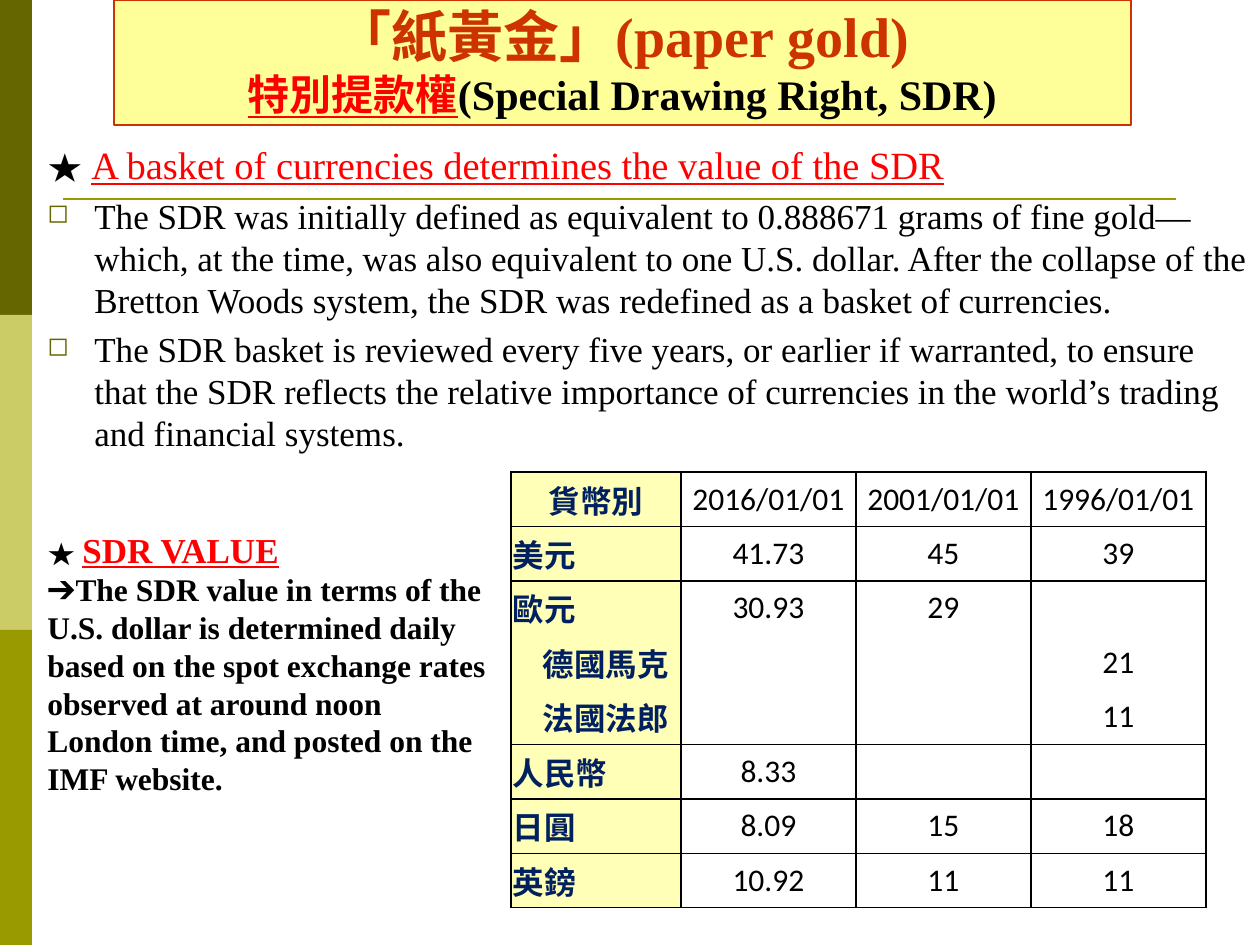
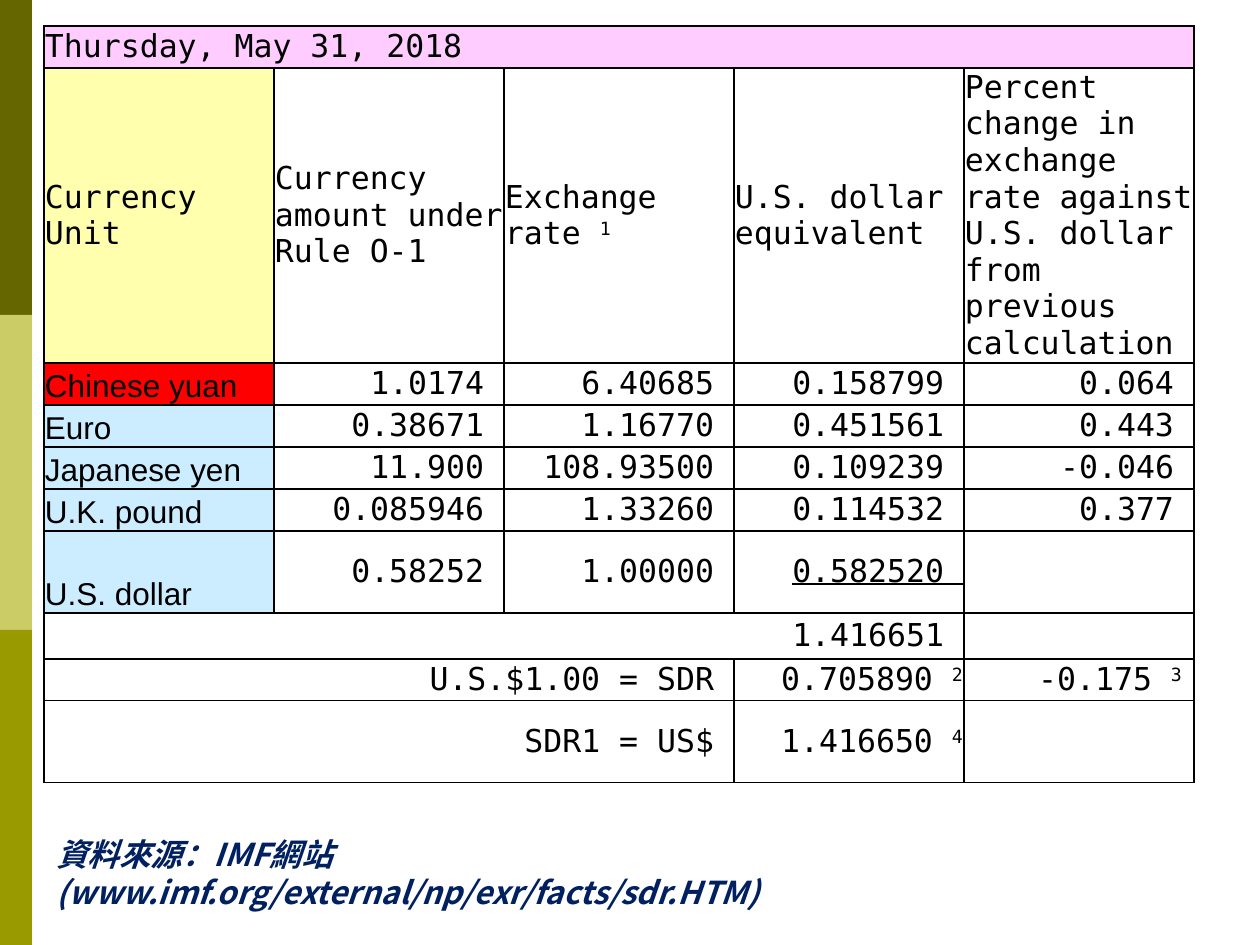
from lxml import etree
from pptx import Presentation, util as u
from pptx.dml.color import RGBColor
from pptx.enum import shapes, text
from pptx.oxml.ns import qn

EMU_PER_PX = 914400 / 126
SERIF, MONO, SANS, TABLE_FONT = "Times New Roman", "DejaVu Sans Mono", "Arial", "Calibri"
CJK = "Noto Sans CJK TC"
BLACK, RED, NAVY, WHITE = "000000", "FF0000", "002060", "FFFFFF"
BANDS = ("666600", "CCCC66", "999900")
LEFT, CENTER, RIGHT = text.PP_ALIGN.LEFT, text.PP_ALIGN.CENTER, text.PP_ALIGN.RIGHT
MIDDLE, BOTTOM = text.MSO_ANCHOR.MIDDLE, text.MSO_ANCHOR.BOTTOM


def px(length):
    """Turn pixels into EMU."""
    return u.Emu(round(length * EMU_PER_PX))


def rgb(value):
    """Turn a hex string into a colour."""
    return RGBColor.from_string(value)


def child(parent, tag, **attributes):
    """Append a drawing element with attributes."""
    return etree.SubElement(parent, qn(tag), attributes)


def write(paragraph, words, font=SERIF, size=18, color=BLACK, bold=False,
          italic=False, underline=False, raised=False, east=None):
    """Append formatted words to a paragraph."""
    run = paragraph.add_run()
    run.text = words
    style = run.font
    style.name, style.size = font, u.Pt(size)
    style.bold, style.italic, style.underline = bold, italic, underline
    style.color.rgb = rgb(color)
    if east:
        child(run._r.get_or_add_rPr(), "a:ea", typeface=east)
    if raised:
        run._r.get_or_add_rPr().set("baseline", "30000")


def text_frame(slide, box):
    """Add a wrapping text box and return its frame."""
    frame = slide.shapes.add_textbox(*map(px, box)).text_frame
    frame.word_wrap = True
    return frame


def frame_slide(slide):
    """Draw the side bands and the rule shared by the slides."""
    for order, color in enumerate(BANDS):
        band = slide.shapes.add_shape(shapes.MSO_SHAPE.RECTANGLE,
                                      *map(px, (0, order * 315, 32, 315)))
        band.shadow.inherit = False
        band.fill.solid()
        band.fill.fore_color.rgb = rgb(color)
        band.line.fill.background()
    rule = slide.shapes.add_connector(shapes.MSO_CONNECTOR.STRAIGHT,
                                      *map(px, (63, 199, 1176, 199)))
    rule.line.color.rgb = rgb(BANDS[-1])
    rule.line.width = u.Pt(1.5)
    child(rule._element.spPr, "a:effectLst")


def style_cell(cell, fill=None, inset=(2, 0), anchor=MIDDLE, sides="LRTB", top_width=1):
    """Set the borders, fill, margins and anchor of a cell."""
    properties = cell._tc.get_or_add_tcPr()
    for side in "LRTB":
        width = top_width if side == "T" else 1
        edge = child(properties, f"a:ln{side}", w=str(u.Pt(width)))
        if side in sides:
            child(child(edge, "a:solidFill"), "a:srgbClr", val=BLACK)
        else:
            child(edge, "a:noFill")
    if fill:
        cell.fill.solid()
        cell.fill.fore_color.rgb = rgb(fill)
    else:
        cell.fill.background()
    cell.margin_left = cell.margin_right = px(inset[0])
    cell.margin_top = cell.margin_bottom = px(inset[1])
    cell.vertical_anchor = anchor


def plain_table(slide, box, rows, widths):
    """Add a table without banding, with the given column widths."""
    table = slide.shapes.add_table(rows, len(widths), *map(px, box)).table
    table.first_row = table.horz_banding = False
    for column, width in zip(table.columns, widths):
        column.width = px(width)
    return table


def sdr_title(slide, box):
    """Format the two-line title panel."""
    title = slide.shapes.title
    title.left, title.top, title.width, title.height = map(px, box)
    title.fill.solid()
    title.fill.fore_color.rgb = rgb("FFFF99")
    title.line.color.rgb = rgb("CC3300")
    title.line.width = u.Pt(0.75)
    frame = title.text_frame
    frame.auto_size = text.MSO_AUTO_SIZE.NONE
    frame.vertical_anchor = BOTTOM
    paper_gold, full_name = frame.paragraphs[0], frame.add_paragraph()
    paper_gold.alignment = full_name.alignment = CENTER
    write(paper_gold, "「紙黃金」", font=CJK, size=32, color="CC3300", bold=True, east=CJK)
    write(paper_gold, "(paper gold)", size=32, color="CC3300", bold=True)
    write(full_name, "特別提款權", size=24, color=RED, bold=True, underline=True, east=CJK)
    write(full_name, "(Special Drawing Right, SDR)", size=24, bold=True)


def basket_notes(slide, box):
    """Write the heading and the bulleted notes on the basket."""
    notes = (
        "The SDR was initially defined as equivalent to 0.888671 grams of fine gold—which, "
        "at the time, was also equivalent to one U.S. dollar. After the collapse of the "
        "Bretton Woods system, the SDR was redefined as a basket of currencies.",
        "The SDR basket is reviewed every five years, or earlier if warranted, to ensure that "
        "the SDR reflects the relative importance of currencies in the world’s trading and "
        "financial systems.",
    )
    frame = text_frame(slide, box)
    heading = frame.paragraphs[0]
    write(heading, "★ ", size=20, bold=True)
    write(heading, "A basket of currencies determines the value of the SDR",
          size=22, color=RED, underline=True)
    for note in notes:
        write(frame.add_paragraph(), note, size=20)
    for paragraph in frame.paragraphs:
        paragraph.space_before = u.Pt(4)
        layout = paragraph._p.get_or_add_pPr()
        layout.set("marL", str(px(47)))
        layout.set("indent", str(-px(47)))
        if paragraph.text != heading.text:
            child(child(layout, "a:buClr"), "a:srgbClr", val=BANDS[0])
            child(layout, "a:buSzPct", val="75000")
            child(layout, "a:buChar", char="◻")


def value_note(slide, box):
    """Write the note on how the SDR value is set."""
    frame = text_frame(slide, box)
    heading = frame.paragraphs[0]
    write(heading, "★ ", size=16, bold=True)
    write(heading, "SDR VALUE", size=20, color=RED, bold=True, underline=True)
    write(frame.add_paragraph(),
          "➔The SDR value in terms of the U.S. dollar is determined daily based on the spot "
          "exchange rates observed at around noon London time, and posted on the IMF website.",
          bold=True)


def weights_table(slide, box):
    """Build the table of currency weights by review date."""
    weights = (
        ("貨幣別", "2016/01/01", "2001/01/01", "1996/01/01"),
        ("美元", "41.73", "45", "39"),
        ("歐元", "30.93", "29", ""),
        ("德國馬克", "", "", "21"),
        ("法國法郎", "", "", "11"),
        ("人民幣", "8.33", "", ""),
        ("日圓", "8.09", "15", "18"),
        ("英鎊", "10.92", "11", "11"),
    )
    euro_group = {"歐元": "LRT", "德國馬克": "LR", "法國法郎": "LRB"}
    table = plain_table(slide, box, len(weights), (170, 175, 175, 175))
    for row, record in enumerate(weights):
        for column, entry in enumerate(record):
            cell, is_label = table.cell(row, column), column == 0
            style_cell(cell, fill="FFFFB8" if is_label else None,
                       sides=euro_group.get(record[0], "LRTB"),
                       top_width=1.5 if row == 0 else 1)
            if is_label and row in (3, 4):
                cell.margin_left = px(32)
            paragraph = cell.text_frame.paragraphs[0]
            paragraph.alignment = LEFT if is_label and row else CENTER
            if entry:
                write(paragraph, entry, font=TABLE_FONT, color=NAVY if is_label else BLACK,
                      bold=is_label, east=CJK if is_label else None)


def rates_table(slide, box):
    """Build the table of the daily SDR valuation."""
    rates = (
        ("Thursday, May 31, 2018", "", "", "", ""),
        ("Currency Unit", "Currency amount under Rule O-1", ("Exchange rate ", "1"),
         "U.S. dollar equivalent",
         "Percent change in exchange rate against U.S. dollar from previous calculation"),
        ("Chinese yuan", "1.0174 ", "6.40685 ", "0.158799 ", "0.064 "),
        ("Euro", "0.38671 ", "1.16770 ", "0.451561 ", "0.443 "),
        ("Japanese yen", "11.900 ", "108.93500 ", "0.109239 ", "-0.046 "),
        ("U.K. pound", "0.085946 ", "1.33260 ", "0.114532 ", "0.377 "),
        ("U.S. dollar", "0.58252 ", "1.00000 ", "0.582520 ", ""),
        ("1.416651 ", "", "", "", ""),
        ("U.S.$1.00 = SDR ", "", "", ("0.705890 ", "2"), ("-0.175 ", "3 ")),
        ("SDR1 = US$ ", "", "", ("1.416650 ", "4"), ""),
    )
    heights = (42, 295, 42, 42, 42, 42, 82, 46, 42, 82)
    last_merged_column = {0: 4, 7: 3, 8: 2, 9: 2}
    label_fills = {0: "FFCCFF", 1: "FFFFAD", 2: RED, **dict.fromkeys(range(3, 7), "CCECFF")}
    table = plain_table(slide, box, len(rates), [230] * 5)
    for row, (record, height) in enumerate(zip(rates, heights)):
        table.rows[row].height = px(height)
        for column, entry in enumerate(record):
            cell = table.cell(row, column)
            is_currency = column == 0 and 2 <= row <= 6
            style_cell(cell, fill=label_fills.get(row, WHITE) if column == 0 else WHITE,
                       inset=(1, 1), anchor=BOTTOM if is_currency else MIDDLE)
            paragraph = cell.text_frame.paragraphs[0]
            paragraph.alignment = LEFT if row < 2 or is_currency else RIGHT
            value, footnote = entry if isinstance(entry, tuple) else (entry, "")
            if value:
                write(paragraph, value, font=SANS if is_currency else MONO,
                      underline=(row, column) == (6, 3))
            if footnote:
                write(paragraph, footnote, font=MONO, raised=True)
        if row in last_merged_column:
            table.cell(row, 0).merge(table.cell(row, last_merged_column[row]))


def source_note(slide, box):
    """Write the data source in two lines."""
    frame = text_frame(slide, box)
    for paragraph, words in ((frame.paragraphs[0], "資料來源：IMF網站"),
                             (frame.add_paragraph(), "(www.imf.org/external/np/exr/facts/sdr.HTM)")):
        write(paragraph, words, font=CJK, color=NAVY, bold=True, italic=True, east=CJK)


def basket_slide(deck):
    """Build the slide on the SDR basket."""
    slide = deck.slides.add_slide(deck.slide_layouts[5])
    frame_slide(slide)
    sdr_title(slide, (114, 0, 1017, 125))
    basket_notes(slide, (35, 135, 1225, 338))
    value_note(slide, (35, 522, 466, 285))
    weights_table(slide, (511, 472, 695, 436))


def valuation_slide(deck):
    """Build the slide on the daily valuation."""
    slide = deck.slides.add_slide(deck.slide_layouts[6])
    frame_slide(slide)
    rates_table(slide, (44, 26, 1150, 757))
    source_note(slide, (44, 829, 864, 90))


def main():
    """Build and save the presentation."""
    deck = Presentation()
    deck.slide_width, deck.slide_height = px(1260), px(945)
    basket_slide(deck)
    valuation_slide(deck)
    deck.save("out.pptx")


if __name__ == "__main__":
    main()
